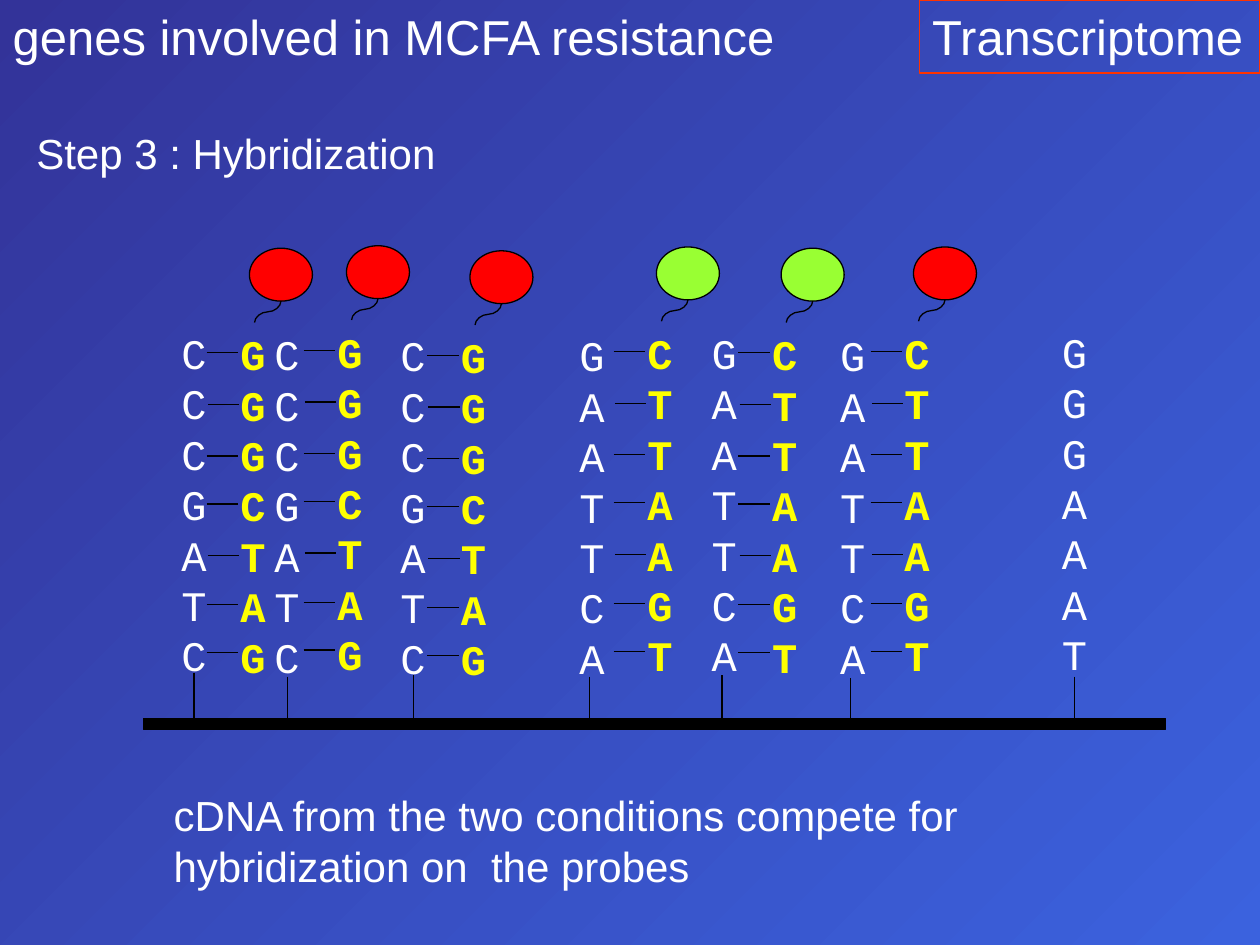
from lxml import etree
from pptx import Presentation
from pptx.dml.color import RGBColor
from pptx.enum.shapes import MSO_CONNECTOR, MSO_SHAPE
from pptx.enum.text import MSO_ANCHOR, MSO_AUTO_SIZE, PP_ALIGN
from pptx.oxml.ns import qn
from pptx.util import Inches, Pt

STRAIGHT, CURVE = MSO_CONNECTOR.STRAIGHT, MSO_CONNECTOR.CURVE
RECTANGLE, OVAL = MSO_SHAPE.RECTANGLE, MSO_SHAPE.OVAL
LEFT, TOP = PP_ALIGN.LEFT, MSO_ANCHOR.TOP
NO_AUTOFIT = MSO_AUTO_SIZE.NONE

BLACK, WHITE, YELLOW = "000000", "FFFFFF", "FFFF00"
RED, GREEN, ORANGE_RED = "FF0000", "99FF33", "FF3300"
STRAND_SIZE = (0.42, 2.9)
BAR_TOP = 5.7

# Height of each base pair's bond below the strand top, and its shift to the right
BONDS = [(0.24, 0), (0.65, 0.01), (1.06, 0), (1.44, 0),
         (1.85, 0.01), (2.24, 0), (2.62, 0)]

# Left, top and label colour of each labelled cDNA strand
GGG_TARGETS = [(2.58, 2.54, RED), (3.56, 2.58, RED), (1.81, 2.56, RED)]
CTT_TARGETS = [(5.04, 2.55, GREEN), (6.03, 2.56, GREEN), (7.08, 2.55, RED)]

# Bases, left, top, post x and post top of each probe
PROBES = [
    ("CCCGATC", 1.34, 2.55, 1.54, 5.34),
    ("CCCGATC", 2.08, 2.56, 2.28, 5.37),
    ("CCCGATC", 3.08, 2.57, 3.28, 5.36),
    ("GAATTCA", 4.5, 2.57, 4.68, 5.37),
    ("GAATTCA", 5.55, 2.55, 5.73, 5.36),
    ("GAATTCA", 6.57, 2.57, 6.75, 5.38),
    ("GGGAAAT", 8.33, 2.54, 8.53, 5.37),
]


def rgb(color):
    return RGBColor.from_string(color)


def set_background(slide):
    fill = slide.background.fill
    fill.gradient()
    fill.gradient_angle = 315
    for stop, position, color in zip(fill.gradient_stops, (0, 1), ("333399", "3B62DE")):
        stop.position = position
        stop.color.rgb = rgb(color)


def write_text(shape, text, size, font="Arial", color=WHITE, bold=False, wrap=True):
    text_frame = shape.text_frame
    text_frame.text = text
    text_frame.word_wrap = wrap
    text_frame.auto_size = NO_AUTOFIT
    text_frame.vertical_anchor = TOP
    paragraph = text_frame.paragraphs[0]
    paragraph.alignment = LEFT
    run_font = paragraph.runs[0].font
    run_font.name, run_font.size, run_font.bold = font, Pt(size), bold
    run_font.color.rgb = rgb(color)


def place(shape, left, top, width, height):
    shape.left, shape.top = Inches(left), Inches(top)
    shape.width, shape.height = Inches(width), Inches(height)


def add_text(shapes, text, box, size, **style):
    text_box = shapes.add_textbox(*map(Inches, box))
    write_text(text_box, text, size, **style)


def add_preset(shapes, preset, box, fill=None, line=BLACK):
    shape = shapes.add_shape(preset, *map(Inches, box))
    shape.shadow.inherit = False
    if fill:
        shape.fill.solid()
        shape.fill.fore_color.rgb = rgb(fill)
    else:
        shape.fill.background()
    shape.line.color.rgb = rgb(line)
    shape.line.width = Pt(0.75)
    return shape


def add_line(shapes, start, end, kind=STRAIGHT):
    connector = shapes.add_connector(kind, *map(Inches, (*start, *end)))
    connector.line.color.rgb = rgb(BLACK)
    connector.line.width = Pt(0.75)
    etree.SubElement(connector.element.spPr, qn("a:effectLst"))
    return connector


def add_strand(shapes, bases, left, top, color, bold=False):
    """Write the bases in a box one letter wide, so that they stack."""
    add_text(shapes, bases, (left, top, *STRAND_SIZE), 24,
             font="Courier New", color=color, bold=bold)


def add_target(shapes, bases, left, top, label_color):
    """Add a cDNA strand with its bonds to the probe and its dye label."""
    add_strand(shapes, bases, left, top, YELLOW, bold=True)
    for drop, shift in BONDS:
        start = left - 0.17 + shift
        add_line(shapes, (start, top + drop), (start + 0.25, top + drop))
    add_preset(shapes, OVAL, (left + 0.17, top - 0.59, 0.5, 0.42), label_color)
    tail = add_line(shapes, (left + 0.23, top - 0.19), (left + 0.4, top + 0.02), CURVE)
    # A quarter turn makes the tail leave the label vertically
    tail.element.spPr.find(qn("a:xfrm")).set("rot", "5400000")


def add_targets(slide, bases, targets):
    shapes = slide.shapes.add_group_shape().shapes
    for left, top, label_color in targets:
        add_target(shapes, bases, left, top, label_color)


def add_probe_array(slide):
    shapes = slide.shapes.add_group_shape().shapes
    add_preset(shapes, RECTANGLE, (1.14, BAR_TOP, 8.11, 0.09), BLACK)
    for bases, left, top, post_x, post_top in PROBES:
        add_strand(shapes, bases, left, top, WHITE)
        add_line(shapes, (post_x, post_top), (post_x, BAR_TOP))


def main():
    presentation = Presentation()
    presentation.slide_width, presentation.slide_height = Inches(10), Inches(7.5)
    slide = presentation.slides.add_slide(presentation.slide_layouts[5])
    set_background(slide)

    title = slide.shapes.title
    place(title, 0, 0, 6.31, 0.57)
    write_text(title, "genes involved in MCFA resistance", 28, wrap=False)

    topic = add_preset(slide.shapes, RECTANGLE, (7.3, 0, 2.7, 0.58), line=ORANGE_RED)
    write_text(topic, "Transcriptome", 28, wrap=False)
    add_text(slide.shapes, "Step 3 : Hybridization", (0.19, 0.96, 3.4, 0.5), 24, wrap=False)

    add_targets(slide, "GGGCTAG", GGG_TARGETS)
    add_probe_array(slide)
    add_targets(slide, "CTTAAGT", CTT_TARGETS)

    add_text(slide.shapes,
             "cDNA from the two conditions compete for hybridization on  the probes",
             (1.28, 6.22, 8.31, 0.91), 24)
    presentation.save("out.pptx")


if __name__ == "__main__":
    main()
